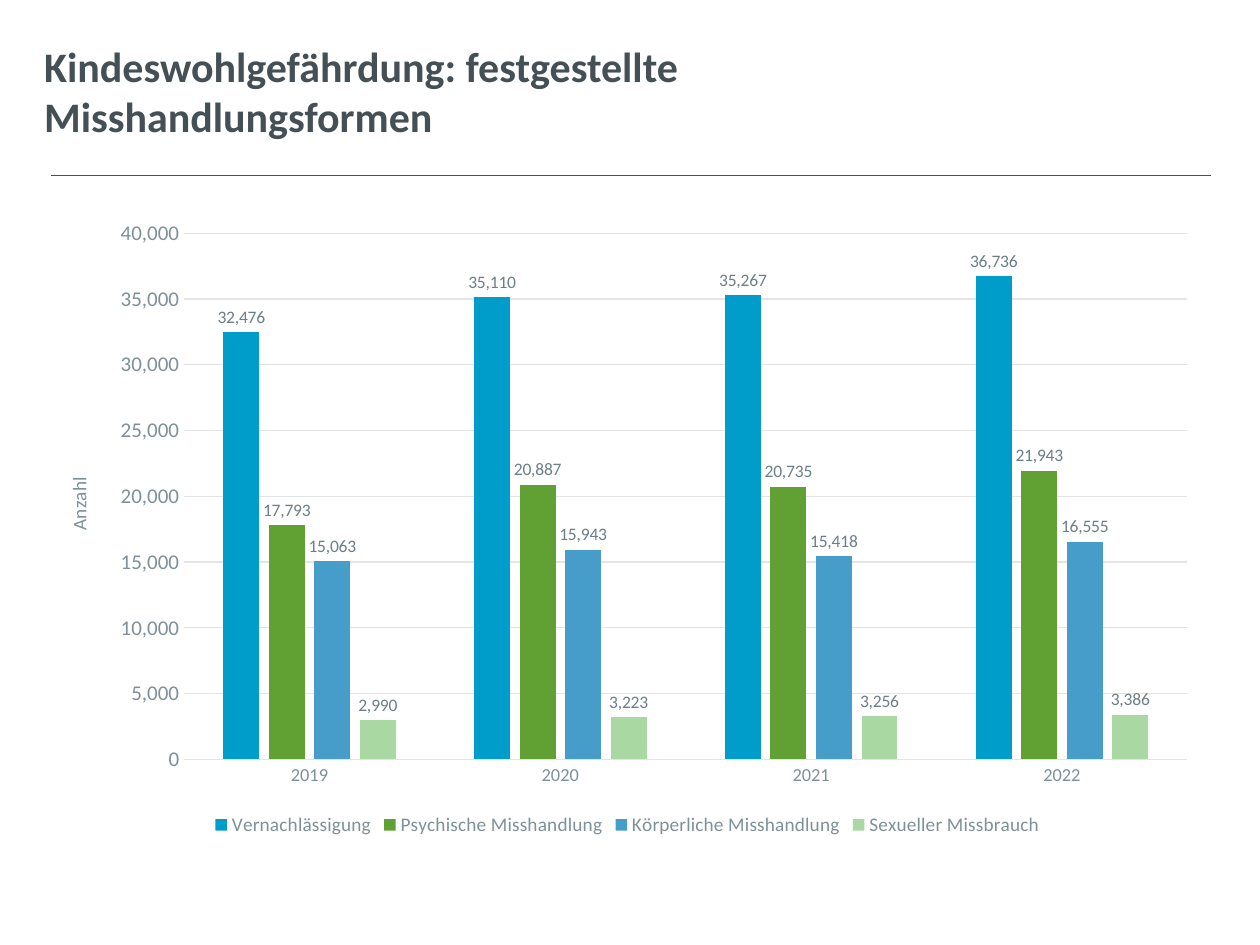
from pptx import Presentation
from pptx.chart.data import CategoryChartData
from pptx.dml.color import RGBColor
from pptx.enum.chart import XL_CHART_TYPE, XL_LABEL_POSITION, XL_LEGEND_POSITION, XL_TICK_MARK
from pptx.enum.shapes import MSO_CONNECTOR
from pptx.enum.text import MSO_ANCHOR, MSO_AUTO_SIZE, PP_ALIGN
from pptx.oxml import parse_xml
from pptx.oxml.ns import nsdecls
from pptx.util import Cm, Pt

DARK = RGBColor(0x44, 0x50, 0x55)
GREY = RGBColor(0x7E, 0x90, 0x98)
LABEL = RGBColor(0x6C, 0x7F, 0x87)
GRID = RGBColor(0xE1, 0xE5, 0xE7)
BLUE = RGBColor(0x00, 0x9D, 0xCA)
GREEN = RGBColor(0x61, 0xA0, 0x32)
SKY = RGBColor(0x47, 0x9D, 0xCA)
MINT = RGBColor(0xA9, 0xD8, 0xA2)


def style(font, size, color, bold=False):
    font.name = "Calibri"
    font.size = Pt(size)
    font.bold = bold
    font.color.rgb = color


deck = Presentation()
deck.slide_width = Cm(25.4)
deck.slide_height = Cm(19.05)
slide = deck.slides.add_slide(deck.slide_layouts[5])

rule = slide.shapes.add_connector(MSO_CONNECTOR.STRAIGHT, Cm(1.02), Cm(3.53), Cm(24.41), Cm(3.53))
rule.line.color.rgb = DARK
rule.line.width = Pt(0.5)
rule._element.spPr.append(parse_xml(f"<a:effectLst {nsdecls('a')}/>"))

title = slide.shapes.title
title.left, title.top, title.width, title.height = Cm(0.89), Cm(0.91), Cm(17.75), Cm(1.83)
frame = title.text_frame
frame.word_wrap = True
frame.auto_size = MSO_AUTO_SIZE.NONE
frame.vertical_anchor = MSO_ANCHOR.MIDDLE
frame.margin_left = frame.margin_right = 0
frame.margin_top = frame.margin_bottom = Cm(0.13)
para = frame.paragraphs[0]
para.alignment = PP_ALIGN.LEFT
run = para.add_run()
run.text = "Kindeswohlgefährdung: festgestellte Misshandlungsformen"
style(run.font, 24, DARK, True)

forms = [
    ("Vernachlässigung", BLUE, (32476, 35110, 35267, 36736)),
    ("Psychische Misshandlung", GREEN, (17793, 20887, 20735, 21943)),
    ("Körperliche Misshandlung", SKY, (15063, 15943, 15418, 16555)),
    ("Sexueller Missbrauch", MINT, (2990, 3223, 3256, 3386)),
]
data = CategoryChartData(number_format="#,##0")
data.categories = ["2019", "2020", "2021", "2022"]
for name, color, counts in forms:
    data.add_series(name, counts)
chart = slide.shapes.add_chart(
    XL_CHART_TYPE.COLUMN_CLUSTERED, Cm(0.89), Cm(4.19), Cm(23.52), Cm(12.78), data
).chart
chart.has_title = False
style(chart.font, 10, DARK)

plot = chart.plots[0]
plot.vary_by_categories = False
plot.gap_width = 219
plot.overlap = -27
for bars, (name, color, counts) in zip(plot.series, forms):
    bars.format.fill.solid()
    bars.format.fill.fore_color.rgb = color
    labels = bars.data_labels
    labels.show_value = True
    labels.position = XL_LABEL_POSITION.OUTSIDE_END
    labels.number_format = "#,##0"
    labels.number_format_is_linked = False
    style(labels.font, 10, LABEL)

years = chart.category_axis
years.major_tick_mark = XL_TICK_MARK.NONE
years.format.line.color.rgb = GRID
years.format.line.width = Pt(0.75)
style(years.tick_labels.font, 10.5, GREY)

scale = chart.value_axis
scale.minimum_scale = 0
scale.maximum_scale = 40000
scale.major_unit = 5000
scale.major_tick_mark = XL_TICK_MARK.NONE
scale.format.line.fill.background()
scale.major_gridlines.format.line.color.rgb = GRID
scale.major_gridlines.format.line.width = Pt(0.75)
scale.tick_labels.number_format = "#,##0"
scale.tick_labels.number_format_is_linked = False
style(scale.tick_labels.font, 12, GREY)
head = scale.axis_title.text_frame.paragraphs[0].add_run()
head.text = "Anzahl"
style(head.font, 11, GREY)

chart.has_legend = True
chart.legend.position = XL_LEGEND_POSITION.BOTTOM
chart.legend.include_in_layout = False
style(chart.legend.font, 11, GREY)

area = chart._chartSpace.chart.plotArea
for old in area.findall("{*}layout"):
    area.remove(old)
area.insert(0, parse_xml(
    f"<c:layout {nsdecls('c')}><c:manualLayout>"
    '<c:layoutTarget val="inner"/><c:xMode val="edge"/><c:yMode val="edge"/>'
    '<c:x val="0.12"/><c:y val="0.04"/><c:w val="0.86"/><c:h val="0.83"/>'
    "</c:manualLayout></c:layout>"
))

deck.save("out.pptx")
